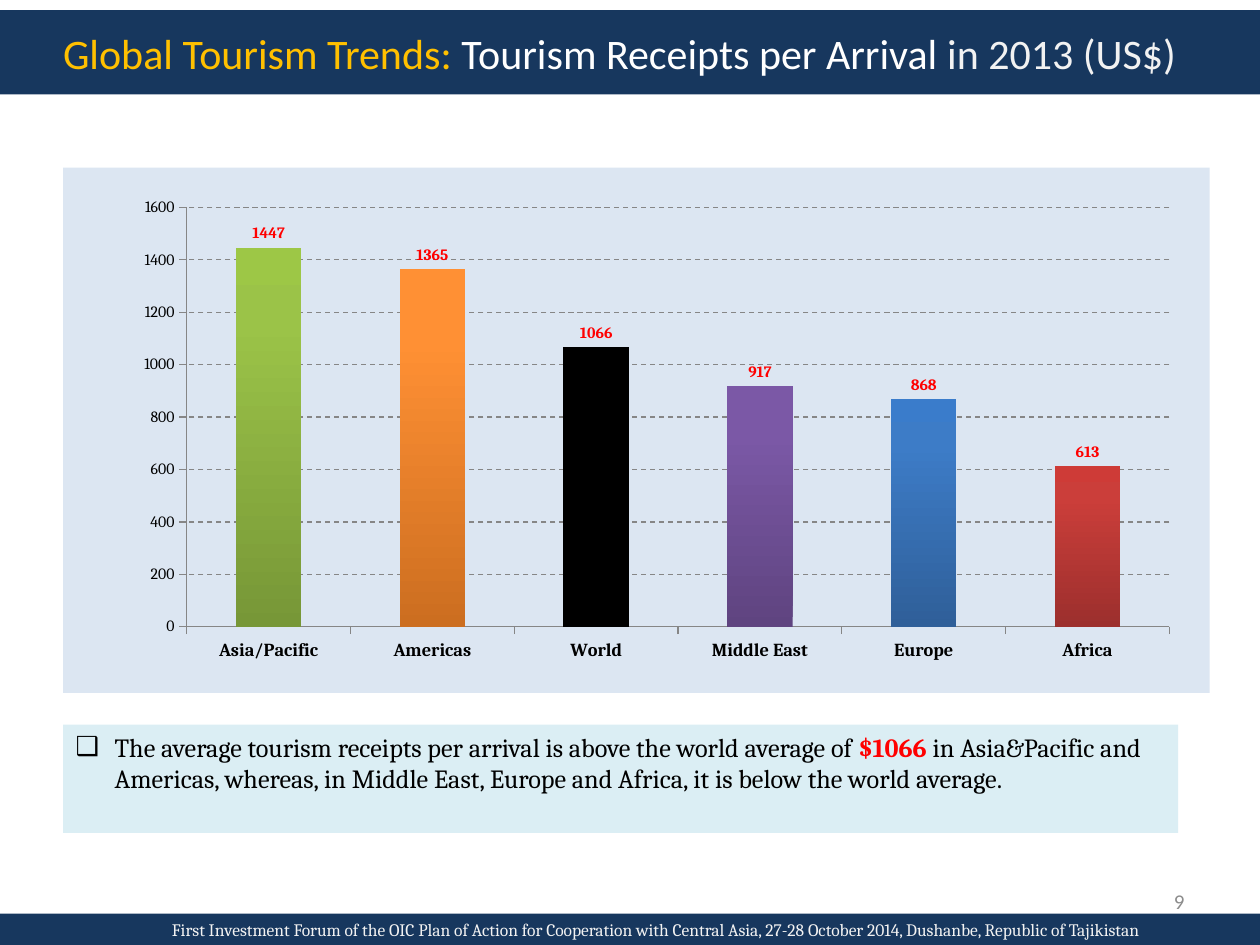
import copy
from dataclasses import dataclass

import lxml.etree
import pptx
import pptx.chart.data
import pptx.dml.color
import pptx.enum.chart
import pptx.enum.dml
import pptx.enum.shapes
import pptx.enum.text
import pptx.oxml
import pptx.oxml.ns
import pptx.util

Inches = pptx.util.Inches
Pt = pptx.util.Pt
qn = pptx.oxml.ns.qn


@dataclass(frozen=True)
class Theme:
    navy: str = "17375E"
    gold: str = "FFC000"
    white: str = "FFFFFF"
    pale: str = "F2F2F2"
    black: str = "000000"
    red: str = "FF0000"
    grey: str = "8C8C8C"
    axis: str = "868686"
    note: str = "DBEEF4"
    panel: str = "DCE6F2"
    bar: str = "4F81BD"
    heading: str = "Calibri"
    body: str = "Cambria"
    title_size: float = 24
    note_size: float = 15
    number_size: float = 12
    category_size: float = 10.5
    base_size: float = 10
    small_size: float = 9


THEME = Theme()
RECEIPTS = [
    ("Asia/Pacific", 1447, ("779737", "9BC348", "9DC746")),
    ("Americas", 1365, ("CC6E20", "FF9034", "FF9136")),
    ("World", 1066, (THEME.black,)),
    ("Middle East", 917, ("5F4480", "7B58A6", "7C57A8")),
    ("Europe", 868, ("2F5F99", "3D7CC7", "3A7CCB")),
    ("Africa", 613, ("9C2F2D", "CB3E3A", "CE3B37")),
]
STOP_POSITIONS = (0, 0.8, 1)
PLOT_LAYOUT = {"x": 0.108, "y": 0.076, "w": 0.857, "h": 0.798}


def rgb(color):
    return pptx.dml.color.RGBColor.from_string(color)


def paint(fill, color):
    fill.solid()
    fill.fore_color.rgb = rgb(color)


def style_font(font, name, size, color, bold=False):
    font.name = name
    font.size = Pt(size)
    font.color.rgb = rgb(color)
    font.bold = bold


def place(shape, box):
    shape.left, shape.top, shape.width, shape.height = [Inches(length) for length in box]


def write_runs(paragraph, runs, name, size):
    for text, color, bold in runs:
        run = paragraph.add_run()
        run.text = text
        style_font(run.font, name, size, color, bold)


def set_band_frame(shape):
    paint(shape.fill, THEME.navy)
    frame = shape.text_frame
    frame.word_wrap = True
    frame.auto_size = pptx.enum.text.MSO_AUTO_SIZE.NONE
    frame.vertical_anchor = pptx.enum.text.MSO_ANCHOR.MIDDLE
    frame.margin_left = Inches(0.5)
    return frame


def add_title(slide, box):
    title = slide.shapes.title
    place(title, box)
    paragraph = set_band_frame(title).paragraphs[0]
    paragraph.alignment = pptx.enum.text.PP_ALIGN.LEFT
    write_runs(paragraph, [
        ("Global Tourism Trends: ", THEME.gold, False),
        ("Tourism Receipts per Arrival ", THEME.white, False),
        ("in 2013 (US$)", THEME.pale, False),
    ], THEME.heading, THEME.title_size)


def add_footer(slide, box):
    footer = slide.shapes.add_shape(
        pptx.enum.shapes.MSO_SHAPE.RECTANGLE, *[Inches(length) for length in box])
    footer.shadow.inherit = False
    footer.line.fill.background()
    paragraph = set_band_frame(footer).paragraphs[0]
    paragraph.alignment = pptx.enum.text.PP_ALIGN.CENTER
    write_runs(paragraph, [(
        "First Investment Forum of the OIC Plan of Action for Cooperation with Central Asia, "
        "27-28 October 2014, Dushanbe, Republic of Tajikistan", THEME.pale, False,
    )], THEME.body, THEME.base_size)


def add_page_number(slide, box):
    frame = slide.shapes.add_textbox(*[Inches(length) for length in box]).text_frame
    frame.word_wrap = True
    frame.vertical_anchor = pptx.enum.text.MSO_ANCHOR.MIDDLE
    paragraph = frame.paragraphs[0]
    paragraph.alignment = pptx.enum.text.PP_ALIGN.RIGHT
    write_runs(paragraph, [("9", THEME.grey, False)], THEME.heading, THEME.number_size)


def add_note(slide, box):
    note = slide.placeholders[1]
    place(note, box)
    paint(note.fill, THEME.note)
    note.text_frame.auto_size = pptx.enum.text.MSO_AUTO_SIZE.NONE
    paragraph = note.text_frame.paragraphs[0]
    paragraph.space_before = Pt(0)
    write_runs(paragraph, [
        ("The average tourism receipts per arrival is above the world average of ",
         THEME.black, False),
        ("$1066 ", THEME.red, True),
        ("in Asia&Pacific and Americas, whereas, in Middle East, Europe and Africa, "
         "it is below the world average.", THEME.black, False),
    ], THEME.body, THEME.note_size)
    properties = paragraph._p.get_or_add_pPr()
    indent = Inches(0.31)
    properties.set("marL", str(indent))
    properties.set("indent", str(-indent))
    lxml.etree.SubElement(properties, qn("a:buChar")).set("char", "❑")


def color_bar(series, index, colors):
    fill = series.points[index].format.fill
    if len(colors) == 1:
        paint(fill, colors[0])
        return
    fill.gradient()
    fill.gradient_angle = 90
    stop_list = series._element.xpath(".//a:gsLst")[-1]
    stop_list.insert(1, copy.deepcopy(stop_list[0]))
    for stop, position, color in zip(fill.gradient_stops, STOP_POSITIONS, colors):
        stop.position = position
        stop.color.rgb = rgb(color)


def panel_properties():
    return pptx.oxml.parse_xml(
        f'<c:spPr {pptx.oxml.ns.nsdecls("c", "a")}><a:solidFill><a:srgbClr val="{THEME.panel}"/>'
        '</a:solidFill><a:ln><a:noFill/></a:ln></c:spPr>')


def set_panel(chart):
    chart_space = chart._chartSpace
    chart_space.find(qn("c:chart")).addnext(panel_properties())
    plot_area = chart_space.find(".//" + qn("c:plotArea"))
    plot_area.append(panel_properties())
    for layout in plot_area.findall(qn("c:layout")):
        plot_area.remove(layout)
    layout = lxml.etree.Element(qn("c:layout"))
    manual = lxml.etree.SubElement(layout, qn("c:manualLayout"))
    settings = {"layoutTarget": "inner", "xMode": "edge", "yMode": "edge", **PLOT_LAYOUT}
    for key, value in settings.items():
        lxml.etree.SubElement(manual, qn("c:" + key)).set("val", str(value))
    plot_area.insert(0, layout)


def style_axis(axis, size, bold):
    axis.major_tick_mark = pptx.enum.chart.XL_TICK_MARK.OUTSIDE
    axis.minor_tick_mark = pptx.enum.chart.XL_TICK_MARK.NONE
    axis.format.line.color.rgb = rgb(THEME.axis)
    style_font(axis.tick_labels.font, THEME.body, size, THEME.black, bold)


def add_receipts_chart(slide, box):
    names, values, palettes = zip(*RECEIPTS)
    data = pptx.chart.data.CategoryChartData()
    data.categories = names
    data.add_series("Series 1", values)
    chart = slide.shapes.add_chart(
        pptx.enum.chart.XL_CHART_TYPE.COLUMN_CLUSTERED,
        *[Inches(length) for length in box], data).chart
    chart.has_title = False
    chart.has_legend = False
    style_font(chart.font, THEME.body, THEME.base_size, THEME.black)
    set_panel(chart)
    style_axis(chart.category_axis, THEME.category_size, True)
    style_axis(chart.value_axis, THEME.small_size, False)
    chart.value_axis.minimum_scale = 0
    chart.value_axis.maximum_scale = 1600
    chart.value_axis.major_unit = 200
    grid = chart.value_axis.major_gridlines.format.line
    grid.color.rgb = rgb(THEME.axis)
    grid.dash_style = pptx.enum.dml.MSO_LINE.DASH
    plot = chart.plots[0]
    plot.gap_width = 150
    plot.vary_by_categories = False
    series = plot.series[0]
    paint(series.format.fill, THEME.bar)
    for index, colors in enumerate(palettes):
        color_bar(series, index, colors)
    plot.has_data_labels = True
    labels = plot.data_labels
    labels.show_value = True
    labels.position = pptx.enum.chart.XL_LABEL_POSITION.OUTSIDE_END
    style_font(labels.font, THEME.body, THEME.small_size, THEME.red, True)


def main():
    presentation = pptx.Presentation()
    presentation.slide_width, presentation.slide_height = Inches(10), Inches(7.5)
    slide = presentation.slides.add_slide(presentation.slide_layouts[1])
    add_title(slide, (0, 0.08, 10, 0.67))
    add_footer(slide, (0, 7.25, 10, 0.25))
    add_page_number(slide, (7.17, 6.95, 2.33, 0.4))
    add_note(slide, (0.5, 5.75, 8.85, 0.86))
    add_receipts_chart(slide, (0.5, 1.33, 9.1, 4.17))
    presentation.save("out.pptx")


if __name__ == "__main__":
    main()
